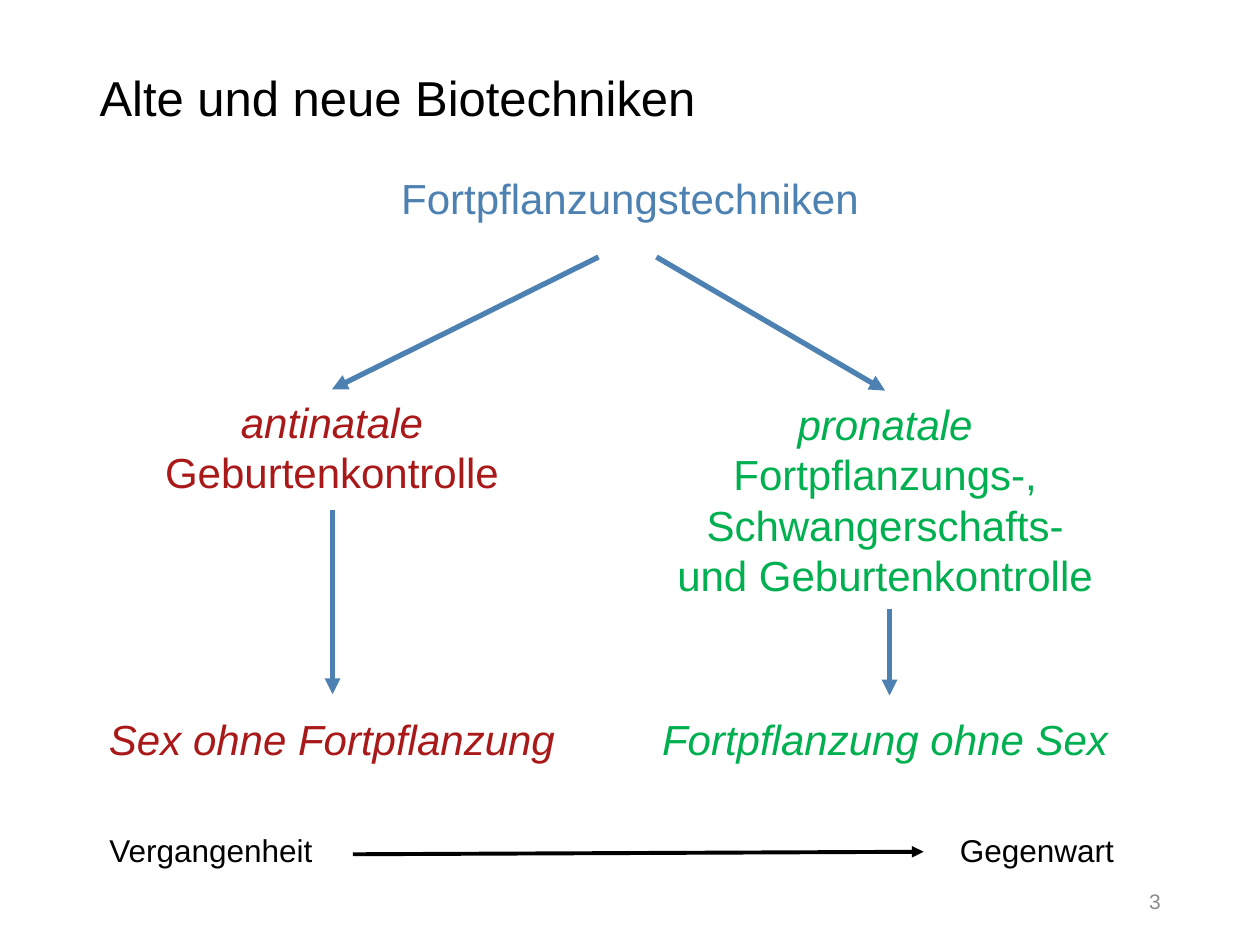
from lxml import etree
from pptx import Presentation
from pptx.dml.color import RGBColor
from pptx.enum.shapes import MSO_CONNECTOR
from pptx.enum.text import MSO_ANCHOR, MSO_AUTO_SIZE, PP_ALIGN
from pptx.oxml.ns import qn
from pptx.util import Inches, Pt

STRAIGHT = MSO_CONNECTOR.STRAIGHT
TOP, MIDDLE = MSO_ANCHOR.TOP, MSO_ANCHOR.MIDDLE
LEFT, CENTER, RIGHT = PP_ALIGN.LEFT, PP_ALIGN.CENTER, PP_ALIGN.RIGHT
NO_AUTOFIT = MSO_AUTO_SIZE.NONE
TITLE_ONLY = 5
TOP_SIDE = 0

FONT = "Arial"
BLACK, GRAY = "000000", "8C8C8C"
BLUE, RED, GREEN = "4C81B1", "AA1919", "00B050"


def color(hex_value):
    return RGBColor.from_string(hex_value)


def format_paragraph(paragraph, size, hex_value, align):
    paragraph.alignment = align
    paragraph.font.name = FONT
    paragraph.font.size = Pt(size)
    paragraph.font.color.rgb = color(hex_value)


def add_title(slide, text):
    title = slide.shapes.title
    title.left, title.top = Inches(0.69), Inches(0.4)
    title.width, title.height = Inches(8.62), Inches(0.79)
    frame = title.text_frame
    frame.text = text
    frame.auto_size = NO_AUTOFIT
    frame.vertical_anchor = MIDDLE
    paragraph = frame.paragraphs[0]
    paragraph.line_spacing = 0.9
    format_paragraph(paragraph, 28, BLACK, LEFT)


def add_label(slide, box, size, hex_value, align=CENTER, anchor=MIDDLE,
              italic="", upright=""):
    """Text box with an italic part followed by an upright part."""
    shape = slide.shapes.add_textbox(*[Inches(value) for value in box])
    frame = shape.text_frame
    frame.word_wrap = True
    frame.vertical_anchor = anchor
    paragraph = frame.paragraphs[0]
    format_paragraph(paragraph, size, hex_value, align)
    for text, is_italic in ((italic, True), (upright, False)):
        if text:
            run = paragraph.add_run()
            run.text = text
            run.font.italic = is_italic
    return shape


def add_arrow(slide, start, end, hex_value=BLUE, width=3, target=None):
    points = [Inches(value) for value in (*start, *end)]
    arrow = slide.shapes.add_connector(STRAIGHT, *points)
    if target is not None:
        arrow.end_connect(target, TOP_SIDE)
    arrow.line.color.rgb = color(hex_value)
    arrow.line.width = Pt(width)
    etree.SubElement(arrow.line._get_or_add_ln(), qn("a:tailEnd"), type="triangle")
    etree.SubElement(arrow._element.spPr, qn("a:effectLst"))


def main():
    presentation = Presentation()
    presentation.slide_width, presentation.slide_height = Inches(10), Inches(7.5)
    slide = presentation.slides.add_slide(presentation.slide_layouts[TITLE_ONLY])

    add_title(slide, "Alte und neue Biotechniken")
    add_label(slide, (7.06, 6.95, 2.25, 0.4), 12, GRAY, RIGHT, upright="3")

    # Tree of techniques
    add_label(slide, (2.97, 1.32, 4.06, 0.5), 24, BLUE,
              upright="Fortpflanzungstechniken")
    antinatal = add_label(slide, (0.97, 3.09, 3.33, 0.91), 24, RED,
                          italic="antinatale", upright=" Geburtenkontrolle")
    pronatal = add_label(
        slide, (5.21, 3.1, 3.63, 1.72), 24, GREEN, italic="pronatale ",
        upright="Fortpflanzungs-, Schwangerschafts- und Geburtenkontrolle")
    add_label(slide, (0.52, 5.61, 4.23, 0.5), 24, RED,
              italic="Sex ohne Fortpflanzung")
    add_label(slide, (4.91, 5.61, 4.23, 0.5), 24, GREEN,
              italic="Fortpflanzung ohne Sex")

    # Branches, then outcomes
    add_arrow(slide, (4.75, 2.04), (2.64, 3.09), target=antinatal)
    add_arrow(slide, (5.21, 2.04), (7.03, 3.1), target=pronatal)
    add_arrow(slide, (2.64, 4.05), (2.64, 5.51))
    add_arrow(slide, (7.06, 4.83), (7.06, 5.52))

    # Time axis
    add_label(slide, (0.77, 6.55, 1.87, 0.4), 18, BLACK, LEFT, TOP,
              upright="Vergangenheit")
    add_label(slide, (7.07, 6.55, 1.87, 0.4), 18, BLACK, RIGHT, TOP,
              upright="Gegenwart")
    add_arrow(slide, (2.8, 6.78), (7.33, 6.76), BLACK, 2.25)

    presentation.save("out.pptx")


if __name__ == "__main__":
    main()
